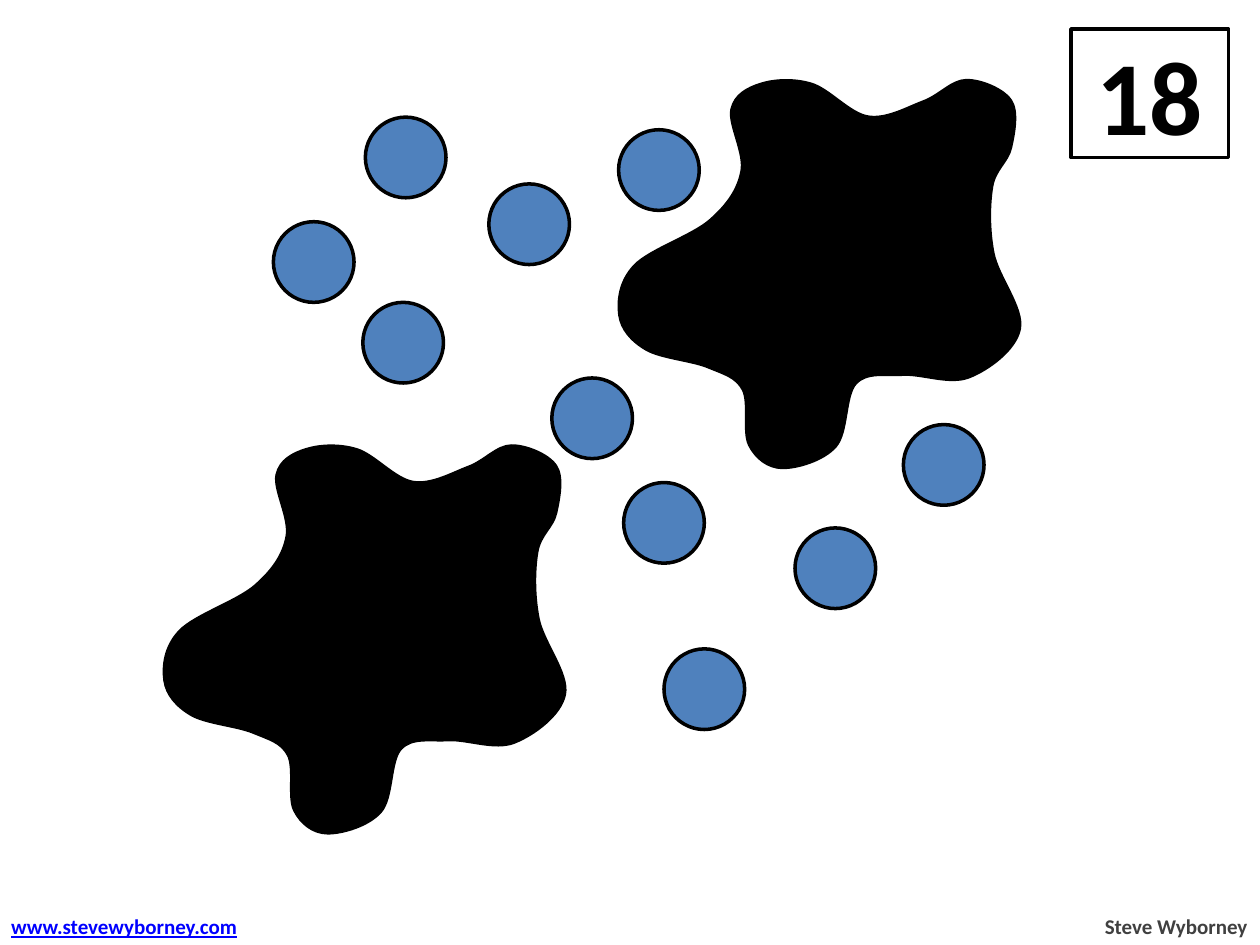
from lxml import etree
from pptx import Presentation
from pptx.dml.color import RGBColor
from pptx.enum.shapes import MSO_SHAPE
from pptx.enum.text import MSO_ANCHOR, MSO_AUTO_SIZE, PP_ALIGN
from pptx.oxml.ns import qn
from pptx.util import Inches, Pt

RECTANGLE, OVAL = MSO_SHAPE.RECTANGLE, MSO_SHAPE.OVAL
LEFT, CENTER, RIGHT = PP_ALIGN.LEFT, PP_ALIGN.CENTER, PP_ALIGN.RIGHT
MIDDLE = MSO_ANCHOR.MIDDLE
FIT_SHAPE = MSO_AUTO_SIZE.SHAPE_TO_FIT_TEXT
BLACK, WHITE, BLUE = "000000", "FFFFFF", "4F81BD"
GREY, LINK_BLUE = "404040", "0000FF"


def paint(shape, fill):
    shape.shadow.inherit = False
    shape.fill.solid()
    shape.fill.fore_color.rgb = RGBColor.from_string(fill)
    shape.line.color.rgb = RGBColor.from_string(BLACK)
    shape.line.width = Pt(2)


def write(shape, text, size, color, align):
    paragraph = shape.text_frame.paragraphs[0]
    paragraph.alignment = align
    run = paragraph.add_run()
    run.text = text
    run.font.name = "Calibri"
    run.font.size = Pt(size)
    run.font.bold = True
    run.font.color.rgb = RGBColor.from_string(color)
    return run


prs = Presentation()
prs.slide_width, prs.slide_height = Inches(10), Inches(7.5)
slide = prs.slides.add_slide(prs.slide_layouts[6])
shapes = slide.shapes

# Total in the corner
total = shapes.add_shape(RECTANGLE, Inches(8.5), Inches(0.23), Inches(1.25), Inches(1.02))
paint(total, WHITE)
total.text_frame.vertical_anchor = MIDDLE
write(total, "18", 60, BLACK, CENTER)

# Footer: author on the right, web address on the left
footers = [
    (8.66, 1.34, "Steve Wyborney", GREY, RIGHT, False),
    (-0.01, 2.05, "www.stevewyborney.com", LINK_BLUE, LEFT, True),
]
for left, width, text, color, align, underlined in footers:
    footer = shapes.add_textbox(Inches(left), Inches(7.2), Inches(width), Inches(0.3))
    footer.text_frame.word_wrap = False
    footer.text_frame.auto_size = FIT_SHAPE
    write(footer, text, 12, color, align).font.underline = underlined

# Dots to count, some of them underneath the blots
DOT = Inches(0.64)
dots = [
    (2.9, 0.93), (2.17, 1.76), (1.66, 4.89), (3.88, 1.46), (3.6, 3.71), (4.91, 1.03),
    (2.88, 2.4), (3.07, 5.07), (4.95, 3.83), (5.35, 2.05), (5.27, 5.15), (4.38, 3),
    (5.99, 2.9), (6.31, 4.19), (2.42, 3.81), (7.17, 3.37), (6.3, 1.45), (7.17, 2.11),
]
for left, top in dots:
    paint(shapes.add_shape(OVAL, Inches(left), Inches(top), DOT, DOT), BLUE)

# Two equal ink blots: a smooth closed curve through these points
blot_outline = [
    (5.13, 2.77), (4.92, 2.5), (5.04, 2.11), (5.64, 1.75), (5.89, 1.36), (5.81, 0.87),
    (6.04, 0.67), (6.44, 0.67), (6.89, 0.93), (7.33, 0.81), (7.67, 0.64), (8.02, 0.8),
    (8.02, 1.17), (7.87, 1.48), (7.88, 2.01), (8.09, 2.61), (7.69, 2.99), (7.17, 2.97),
    (6.79, 3.04), (6.63, 3.54), (6.21, 3.71), (5.95, 3.53), (5.9, 3.09), (5.62, 2.91),
]
for shift_x, shift_y in [(0, 0), (-3.61, 2.9)]:
    points = [(Inches(x + shift_x), Inches(y + shift_y)) for x, y in blot_outline]
    builder = shapes.build_freeform(*points[0])
    builder.add_line_segments(points[1:] + points[:1], close=True)
    blot = builder.convert_to_shape()
    paint(blot, BLACK)

    # Bend each straight side; handles follow the neighbouring points
    sides = list(blot.element.iter(qn("a:lnTo")))
    count = len(points)
    for i, side in enumerate(sides[:count]):
        before, start, end, after = (points[(i + k) % count] for k in (-1, 0, 1, 2))
        leaving = [s + (e - b) / 6 for b, s, e in zip(before, start, end)]
        arriving = [e - (a - s) / 6 for s, e, a in zip(start, end, after)]
        curve = etree.Element(qn("a:cubicBezTo"))
        for x, y in (leaving, arriving, end):
            etree.SubElement(curve, qn("a:pt"), x=str(round(x - blot.left)),
                             y=str(round(y - blot.top)))
        side.getparent().replace(side, curve)

prs.save("out.pptx")
